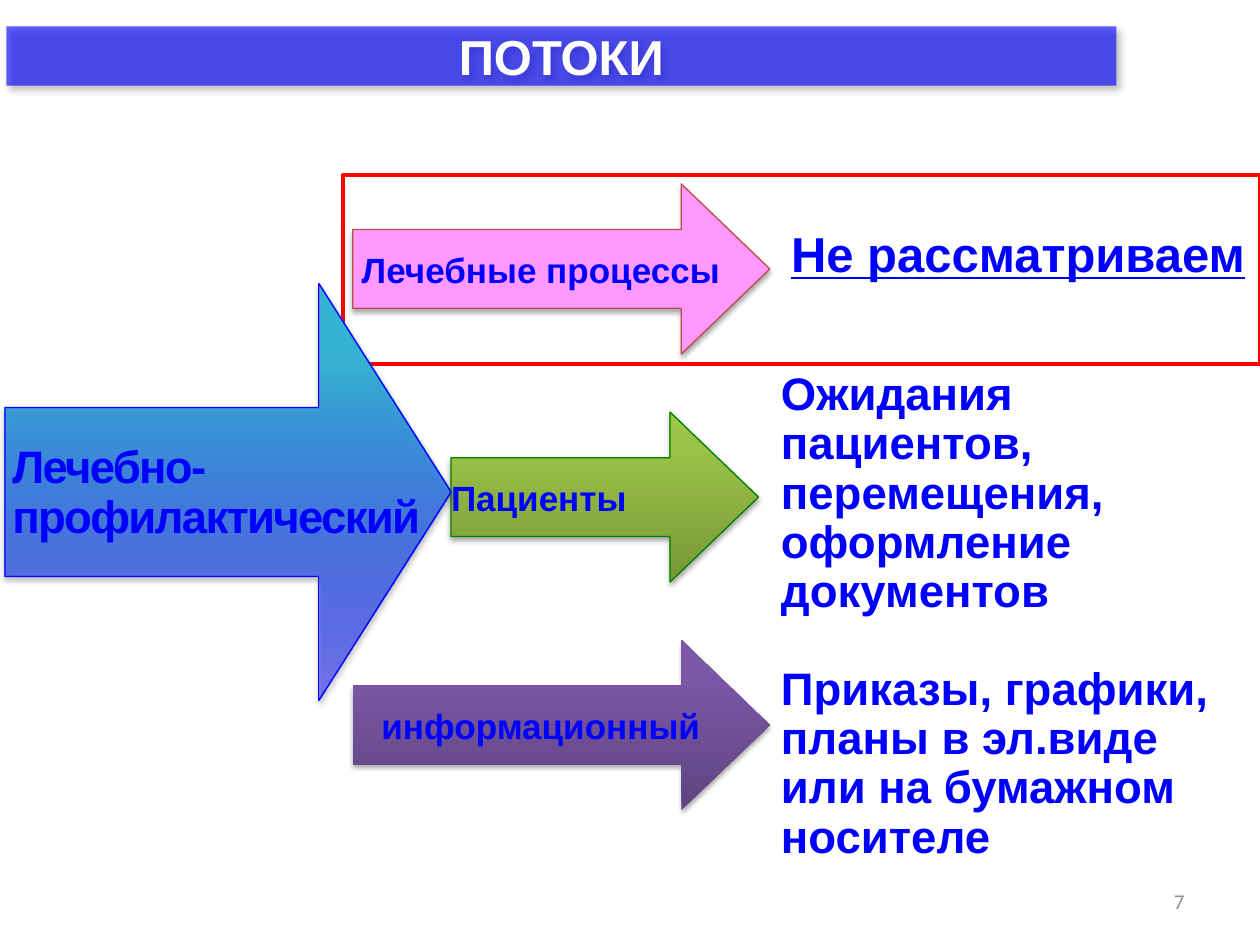
"""Build the slide of clinic flows: one source arrow, three flow arrows and notes."""
from lxml import etree
from pptx import Presentation
from pptx.dml.color import RGBColor
from pptx.enum.shapes import MSO_SHAPE
from pptx.enum.text import MSO_ANCHOR, PP_ALIGN
from pptx.oxml import parse_xml
from pptx.util import Inches, Pt

ARROW, FRAME = MSO_SHAPE.RIGHT_ARROW, MSO_SHAPE.RECTANGLE
LEFT, MID, RIGHT = PP_ALIGN.LEFT, PP_ALIGN.CENTER, PP_ALIGN.RIGHT
CENTER = MSO_ANCHOR.MIDDLE
BLUE = RGBColor(0x00, 0x00, 0xFF)
WHITE = RGBColor(0xFF, 0xFF, 0xFF)
PINK = RGBColor(0xFF, 0x99, 0xFF)
BRICK = RGBColor(0xBF, 0x4C, 0x48)
GREEN = RGBColor(0x00, 0x80, 0x00)
RED = RGBColor(0xFF, 0x00, 0x00)
GRAY = RGBColor(0x8C, 0x8C, 0x8C)
NS = "http://schemas.openxmlformats.org/drawingml/2006/main"

TITLE = "ПОТОКИ"
PURPLE_FADE = [(0, "5F4480", 100), (80, "7B58A6", 100), (100, "7C57A8", 100)]
GREEN_FADE = [(0, "779737", 100), (80, "9BC348", 100), (100, "9DC746", 100)]
BLUE_FADE = [(0, "0000FF", 45), (80, "37B1D2", 100), (100, "34B4D6", 100)]
FLOW_ADJ, MAIN_ADJ = (0.463, 0.52), (0.405, 0.317)
FLOWS = [
    ("Лечебные процессы", (2.8, 1.46, 3.31, 1.35), PINK, BRICK, MID),
    ("информационный", (2.8, 5.08, 3.31, 1.35), PURPLE_FADE, None, MID),
    ("Пациенты", (3.58, 3.27, 2.44, 1.35), GREEN_FADE, GREEN, LEFT),
]
NOTES = [
    ("Не рассматриваем", (6.18, 1.78, 3.82, 0.53), 28),
    ("Ожидания пациентов, перемещения, оформление документов",
     (6.1, 2.9, 3.9, 2.07), 26),
    ("Приказы, графики, планы в эл.виде или на бумажном носителе",
     (6.1, 5.24, 3.9, 1.68), 26),
]
SOURCE = ("Лечебно-профилактический", (0, 3.48, 3.82, 0.89), 26)


def place(shape, area):
    shape.left, shape.top, shape.width, shape.height = map(Inches, area)


def write(shape, text, size, color=BLUE, align=LEFT, font="Arial", bold=True):
    frame = shape.text_frame
    frame.word_wrap = True
    frame.text = text
    par = frame.paragraphs[0]
    par.alignment = align
    run = par.runs[0]
    run.font.name, run.font.size, run.font.bold = font, Pt(size), bold
    run.font.color.rgb = color
    return run


def shade(shape, alpha, blur, dist, angle):
    shape._element.spPr.append(parse_xml(
        f'<a:effectLst xmlns:a="{NS}"><a:outerShdw blurRad="{Pt(blur)}" '
        f'dist="{Pt(dist)}" dir="{angle * 60000}" algn="ctr" rotWithShape="0">'
        f'<a:srgbClr val="000000"><a:alpha val="{alpha * 1000}"/></a:srgbClr>'
        '</a:outerShdw></a:effectLst>'))


def fade(shape, stops):
    shape.fill.gradient()
    grad = shape._element.spPr.find(f"{{{NS}}}gradFill")
    for part in list(grad):
        grad.remove(part)
    group = etree.SubElement(grad, f"{{{NS}}}gsLst")
    for pos, color, alpha in stops:
        stop = etree.SubElement(group, f"{{{NS}}}gs", pos=str(pos * 1000))
        tint = etree.SubElement(stop, f"{{{NS}}}srgbClr", val=color)
        if alpha < 100:
            etree.SubElement(tint, f"{{{NS}}}alpha", val=str(alpha * 1000))
    etree.SubElement(grad, f"{{{NS}}}lin", ang=str(270 * 60000), scaled="0")


def border(shape, color, width=0.75):
    if color is None:
        shape.line.fill.background()
    else:
        shape.line.color.rgb = color
        shape.line.width = Pt(width)


def arrow(slide, area, adj, fill, line, alpha=35, dist=1.8):
    shape = slide.shapes.add_shape(ARROW, *map(Inches, area))
    shape.adjustments[0], shape.adjustments[1] = adj
    if isinstance(fill, RGBColor):
        shape.fill.solid()
        shape.fill.fore_color.rgb = fill
    else:
        fade(shape, fill)
    border(shape, line)
    shade(shape, alpha, 3.1, dist, 90)
    return shape


def note(slide, text, area, size):
    box = slide.shapes.add_textbox(*map(Inches, area))
    run = write(box, text, size)
    box.text_frame.paragraphs[0].line_spacing = 0.9
    return run


def banner(slide):
    title = slide.shapes.title
    place(title, (0.05, 0.21, 8.81, 0.47))
    title._element.spPr.append(parse_xml(
        f'<a:prstGeom xmlns:a="{NS}" prst="roundRect"><a:avLst/></a:prstGeom>'))
    title.fill.solid()
    title.fill.fore_color.rgb = BLUE
    tint = title._element.spPr.find(f".//{{{NS}}}srgbClr")
    etree.SubElement(tint, f"{{{NS}}}alpha", val="62000")
    border(title, None)
    shade(title, 40, 4, 3, 45)
    write(title, TITLE, 28, WHITE, MID)
    title.text_frame.vertical_anchor = CENTER


def main():
    deck = Presentation()
    deck.slide_width, deck.slide_height = Inches(10), Inches(7.5)
    slide = deck.slides.add_slide(deck.slide_layouts[5])
    banner(slide)

    for text, area, fill, line, align in FLOWS:
        shape = arrow(slide, area, FLOW_ADJ, fill, line)
        write(shape, text, 20, align=align)
        frame = shape.text_frame
        frame.margin_left = frame.margin_right = 0
        frame.vertical_anchor = CENTER

    runs = [note(slide, *item) for item in NOTES]
    runs[0].font.underline = True

    frame = slide.shapes.add_shape(FRAME, *map(Inches, (2.72, 1.39, 7.28, 1.5)))
    frame.shadow.inherit = False
    frame.fill.background()
    border(frame, RED, 2.25)

    arrow(slide, (0.04, 2.25, 3.54, 3.31), MAIN_ADJ, BLUE_FADE, BLUE)
    run = note(slide, *SOURCE)
    run.font._element.set("spc", "-100")

    page = slide.shapes.add_textbox(*map(Inches, (7.17, 6.95, 2.33, 0.4)))
    write(page, "7", 12, GRAY, RIGHT, "Calibri", False)
    page.text_frame.vertical_anchor = CENTER
    deck.save("out.pptx")


if __name__ == "__main__":
    main()
